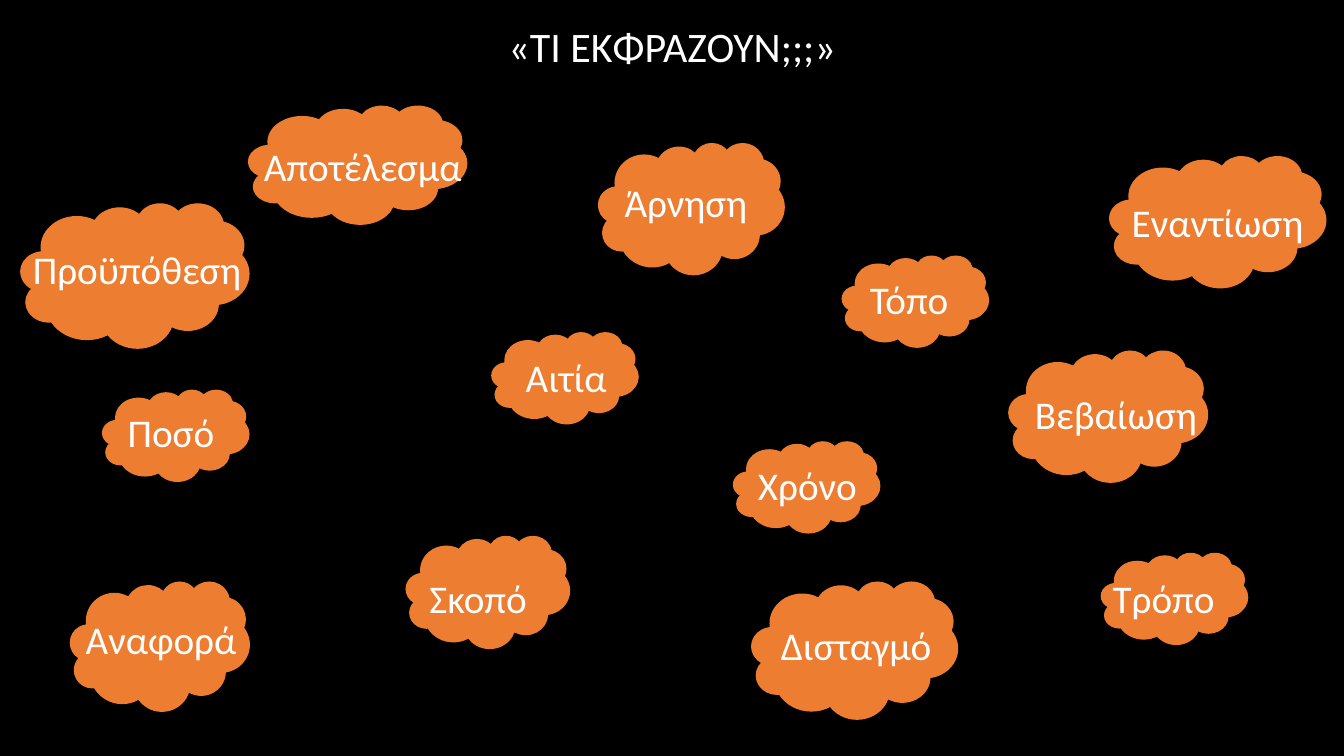
from dataclasses import dataclass

from pptx import Presentation
from pptx.dml.color import RGBColor
from pptx.enum.shapes import MSO_SHAPE
from pptx.enum.text import MSO_ANCHOR, MSO_AUTO_SIZE, PP_ALIGN
from pptx.slide import Slide
from pptx.text.text import TextFrame
from pptx.util import Cm, Pt

BLACK = "000000"
WHITE = "FFFFFF"
ORANGE = "ED7D31"
FONT = "Calibri"
LABEL_HEIGHT = 1.45


@dataclass(frozen=True)
class Meaning:
    """A cloud and its label; all lengths in centimetres."""
    word: str
    cloud_left: float
    cloud_top: float
    label_left: float
    label_top: float
    cloud_width: float = 3.68
    cloud_height: float = 2.29
    label_width: float = 5.0


MEANINGS = [
    Meaning("Τόπο", 21.23, 6.45, 21.67, 6.81),
    Meaning("Ποσό", 2.59, 9.83, 2.97, 10.16),
    Meaning("Άρνηση", 15.09, 3.61, 15.49, 4.37, 4.67, 3.3),
    Meaning("Αποτέλεσμα", 6.27, 2.67, 6.4, 3.45, 5.49, 2.97, 6.58),
    Meaning("Αιτία", 12.4, 8.38, 13, 8.79),
    Meaning("Δισταγμό", 18.95, 14.66, 19.43, 15.52, 5.18, 3.45, 5.89),
    Meaning("Εναντίωση", 27.97, 3.94, 28.27, 4.88, 5.44, 3.3),
    Meaning("Βεβαίωση", 25.43, 8.84, 25.83, 9.7, 5, 3.3),
    Meaning("Τρόπο", 27.76, 13.94, 27.79, 14.35),
    Meaning("Χρόνο", 18.49, 11.13, 18.85, 11.51),
    Meaning("Προϋπόθεση", 0.53, 5.13, 0.58, 6.05, 5.74, 3.63, 6.71),
    Meaning("Αναφορά", 1.78, 14.66, 1.91, 15.39, 4.5, 3.25),
    Meaning("Σκοπό", 10.24, 13.51, 10.57, 14.35, 4.11, 2.82),
]


def colour(value: str) -> RGBColor:
    return RGBColor.from_string(value)


def write(frame: TextFrame, text: str, size: float, align: PP_ALIGN) -> None:
    paragraph = frame.paragraphs[0]
    paragraph.alignment = align
    run = paragraph.add_run()
    run.text = text
    run.font.name = FONT
    run.font.size = Pt(size)
    run.font.color.rgb = colour(WHITE)


def add_title(slide: Slide, text: str) -> None:
    title = slide.shapes.title
    title.left, title.top = Cm(2.34), Cm(0.38)
    title.width, title.height = Cm(29.21), Cm(1.73)
    frame = title.text_frame
    frame.auto_size = MSO_AUTO_SIZE.NONE
    frame.vertical_anchor = MSO_ANCHOR.MIDDLE
    write(frame, text, 30, PP_ALIGN.CENTER)
    frame.paragraphs[0].line_spacing = 0.9


def add_meaning(slide: Slide, meaning: Meaning) -> None:
    cloud = slide.shapes.add_shape(
        MSO_SHAPE.CLOUD, Cm(meaning.cloud_left), Cm(meaning.cloud_top),
        Cm(meaning.cloud_width), Cm(meaning.cloud_height))
    cloud.shadow.inherit = False
    cloud.fill.solid()
    cloud.fill.fore_color.rgb = colour(ORANGE)
    cloud.line.color.rgb = colour(ORANGE)
    cloud.line.width = Pt(1)

    label = slide.shapes.add_textbox(
        Cm(meaning.label_left), Cm(meaning.label_top),
        Cm(meaning.label_width), Cm(LABEL_HEIGHT))
    label.text_frame.word_wrap = True
    label.text_frame.auto_size = MSO_AUTO_SIZE.SHAPE_TO_FIT_TEXT
    write(label.text_frame, meaning.word, 28, PP_ALIGN.LEFT)


def main() -> None:
    presentation = Presentation()
    presentation.slide_width, presentation.slide_height = Cm(33.87), Cm(19.05)

    # Title-only slide on black
    slide = presentation.slides.add_slide(presentation.slide_layouts[5])
    slide.background.fill.solid()
    slide.background.fill.fore_color.rgb = colour(BLACK)
    add_title(slide, "«ΤΙ ΕΚΦΡΑΖΟΥΝ;;;»")

    # Labelled clouds
    for meaning in MEANINGS:
        add_meaning(slide, meaning)

    presentation.save("out.pptx")


if __name__ == "__main__":
    main()
